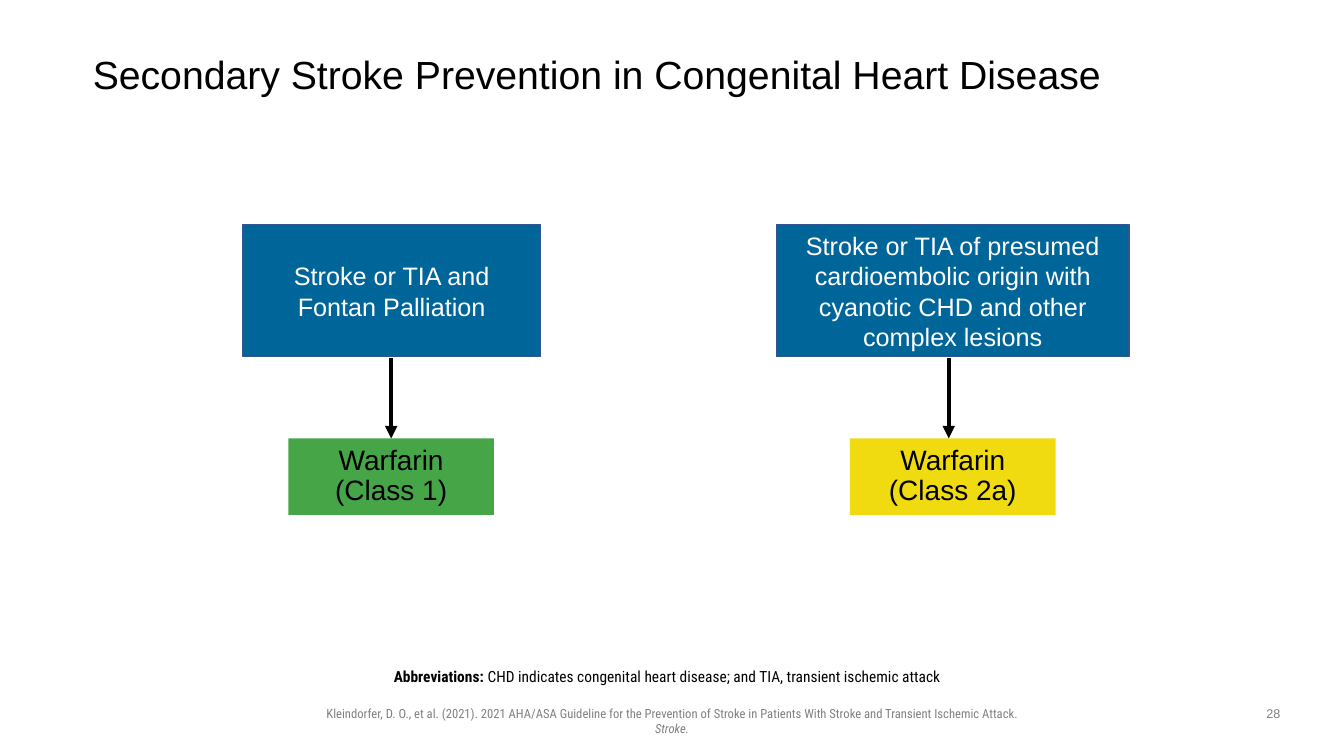
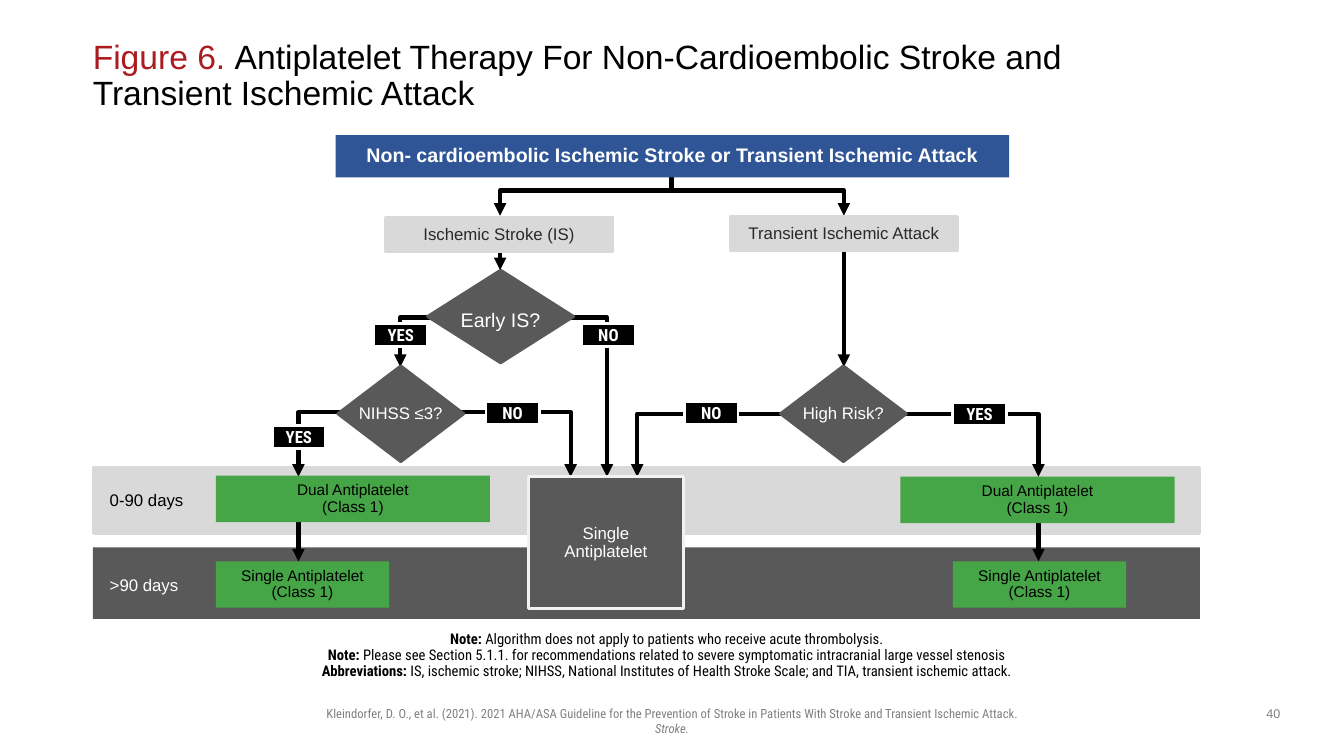
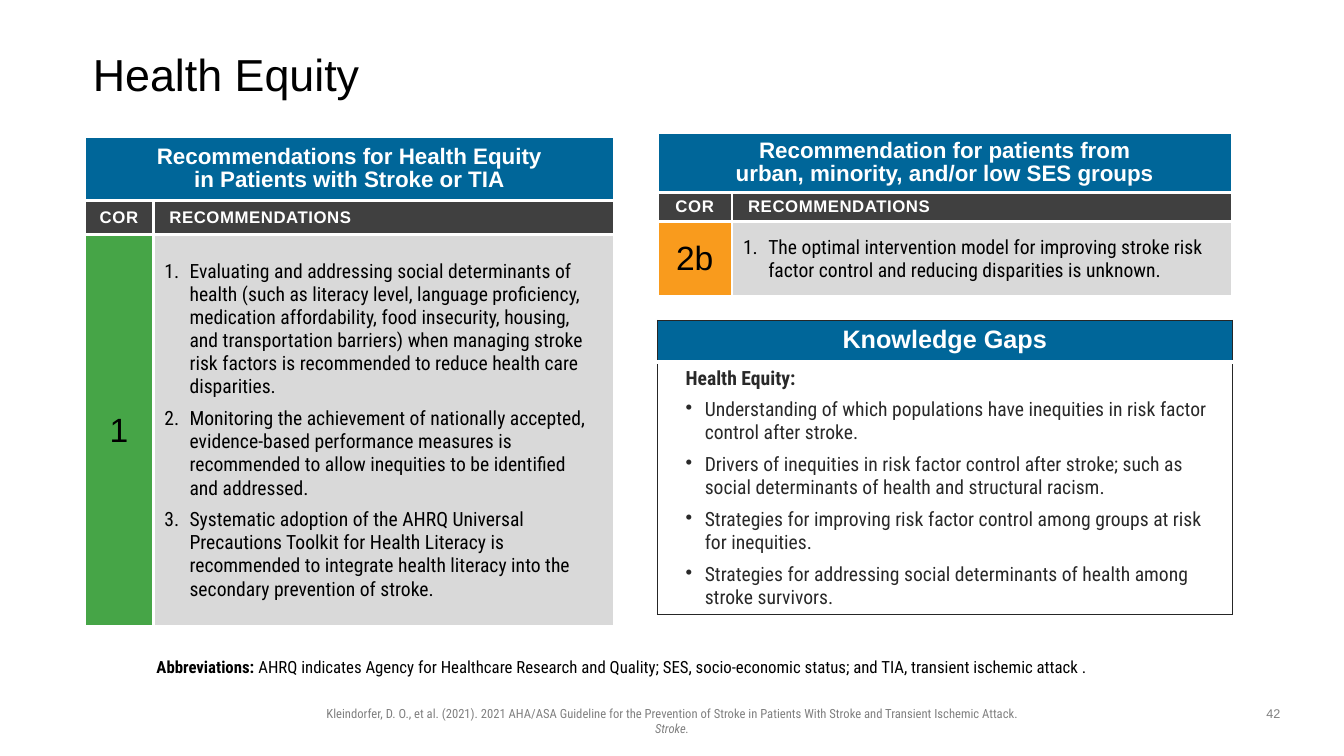
"""Build three slides on secondary stroke prevention: two flowcharts and a table page."""
from dataclasses import dataclass

from lxml import etree
from pptx import Presentation
from pptx.dml.color import RGBColor
from pptx.enum.shapes import MSO_CONNECTOR, MSO_SHAPE
from pptx.enum.text import MSO_ANCHOR, MSO_AUTO_SIZE, PP_ALIGN
from pptx.oxml.ns import qn
from pptx.util import Pt

PX = 9144
STRAIGHT = MSO_CONNECTOR.STRAIGHT
RECTANGLE, DIAMOND = MSO_SHAPE.RECTANGLE, MSO_SHAPE.DIAMOND
TOP, MIDDLE = MSO_ANCHOR.TOP, MSO_ANCHOR.MIDDLE
LEFT, CENTER = PP_ALIGN.LEFT, PP_ALIGN.CENTER
NO_AUTOFIT = MSO_AUTO_SIZE.NONE


@dataclass(frozen=True)
class Theme:
    sans: str = "Arial"
    condensed: str = "Roboto Condensed"
    black: str = "000000"
    white: str = "FFFFFF"
    ink: str = "292929"
    muted: str = "808080"
    red: str = "AC1B1F"
    blue: str = "006699"
    blue_edge: str = "325491"
    navy: str = "2F5597"
    green: str = "46A547"
    yellow: str = "F0DB10"
    orange: str = "F99B1D"
    light: str = "D9D9D9"
    pale: str = "F2F2F2"
    slate: str = "595959"
    charcoal: str = "404040"
    frame: str = "262626"
    footer: int = 9
    small: int = 11
    label: int = 12
    body: int = 14
    heading: int = 16
    box: int = 18
    drug: int = 20
    grade: int = 24


theme = Theme()
PADDING = (10, 5, 10, 5)
BOLD = {"bold": True}


def write(host, paragraphs, size, color, font=theme.sans, bold=False, align=CENTER,
          anchor=MIDDLE, margins=(0, 0, 0, 0), leading=1.0, after=0, left=0, hang=0,
          bullet=("a:buNone", {}), tracking=0, wrap=True):
    frame = host.text_frame
    holder = frame if hasattr(host, "shape_id") else host
    holder.vertical_anchor = anchor
    (holder.margin_left, holder.margin_top,
     holder.margin_right, holder.margin_bottom) = [edge * PX for edge in margins]
    frame.auto_size = NO_AUTOFIT
    frame.word_wrap = wrap
    for content in paragraphs:
        first = frame.paragraphs[0]
        paragraph = frame.add_paragraph() if first.runs else first
        properties = paragraph._p.get_or_add_pPr()
        properties.set("marL", str(left * PX))
        properties.set("indent", str(-hang * PX))
        tag, attributes = bullet
        etree.SubElement(properties, qn(tag), attributes)
        paragraph.alignment = align
        paragraph.line_spacing = leading
        paragraph.space_before = Pt(0)
        paragraph.space_after = Pt(after)
        for text, changes in [(content, {})] if isinstance(content, str) else content:
            run = paragraph.add_run()
            run.text = text
            run.font.name = font
            run.font.size = Pt(size)
            run.font.bold = changes.get("bold", bold)
            run.font.italic = changes.get("italic", False)
            run.font.color.rgb = RGBColor.from_string(changes.get("color", color))
            if tracking:
                run._r.get_or_add_rPr().set("spc", str(tracking))


def box(slide, place, fill, paragraphs=(), line=None, weight=2, geometry=RECTANGLE, **style):
    shape = slide.shapes.add_shape(geometry, *[length * PX for length in place])
    shape.shadow.inherit = False
    shape.fill.solid()
    shape.fill.fore_color.rgb = RGBColor.from_string(fill)
    if line:
        shape.line.color.rgb = RGBColor.from_string(line)
        shape.line.width = Pt(weight)
    else:
        shape.line.fill.background()
    if paragraphs:
        write(shape, paragraphs, **style)


prs = Presentation()
prs.slide_width, prs.slide_height = 1333 * PX, 750 * PX
layout = prs.slide_layouts[1]

pages = [
    ("28", 28, 1150, ["Secondary Stroke Prevention in Congenital Heart Disease"],
     (92, 659, 1150, 30), 11,
     [[("Abbreviations: ", BOLD),
       ("CHD indicates congenital heart disease; and TIA, transient ischemic attack", {})]]),
    ("40", 24, 1006,
     [[("Figure 6. ", {"color": theme.red}),
       ("Antiplatelet Therapy For Non-Cardioembolic Stroke and Transient Ischemic Attack", {})]],
     (270, 622, 793, 30), 10.5,
     [[("Note: ", BOLD),
       ("Algorithm does not apply to patients who receive acute thrombolysis.", {})],
      [("Note: ", BOLD),
       ("Please see Section 5.1.1. for recommendations related to severe symptomatic "
        "intracranial large vessel stenosis", {})],
      [("Abbreviations: ", BOLD),
       ("IS, ischemic stroke; NIHSS, National Institutes of Health Stroke Scale; and TIA, "
        "transient ischemic attack.", {})]]),
    ("42", 32, 1150, ["Health Equity"],
     (112, 649, 1020, 30), 12,
     [[("Abbreviations: ", BOLD),
       ("AHRQ indicates Agency for Healthcare Research and Quality; SES, socio-economic "
        "status; and TIA, transient ischemic attack .", {})]]),
]

slides = []
for number, title_size, title_width, title, note_place, note_size, note in pages:
    slide = prs.slides.add_slide(layout)
    slides.append(slide)
    heading, footnote = slide.placeholders
    for holder, place in ((heading, (92, 40, title_width, 72)), (footnote, note_place)):
        holder.left, holder.top, holder.width, holder.height = [n * PX for n in place]
    write(heading, title, title_size, theme.black, align=LEFT, leading=0.9)
    write(footnote, note, note_size, theme.black, theme.condensed, anchor=TOP,
          margins=(0, 5, 10, 5), leading=0.9)
    page_number = slide.shapes.add_textbox(1242 * PX, 695 * PX, 42 * PX, 26 * PX)
    write(page_number, [number], theme.footer, theme.muted, anchor=TOP, margins=PADDING)

congenital, antiplatelet, equity = slides

citation = congenital.shapes.add_textbox(294 * PX, 695 * PX, 745 * PX, 25 * PX)
write(citation,
      ["Kleindorfer, D. O., et al. (2021). 2021 AHA/ASA Guideline for the Prevention of Stroke "
       "in Patients With Stroke and Transient Ischemic Attack.",
       [("Stroke.", {"italic": True})]],
      theme.footer, theme.muted, theme.condensed, anchor=TOP, margins=PADDING)
layout.shapes.element.append(citation.element)

box(antiplatelet, (92, 543, 1098, 71), theme.slate)
box(antiplatelet, (93, 464, 1097, 65), theme.light, line=theme.light)

routes = [
    (congenital, [(388, 355), (388, 435)]),
    (congenital, [(941, 355), (941, 435)]),
    (antiplatelet, [(666, 164), (666, 189), (496, 189), (496, 214)]),
    (antiplatelet, [(666, 189), (837, 189), (837, 214)]),
    (antiplatelet, [(837, 241), (837, 364)]),
    (antiplatelet, [(496, 249), (496, 268)]),
    (antiplatelet, [(448, 315), (397, 315), (397, 364)]),
    (antiplatelet, [(550, 315), (602, 315), (602, 473)]),
    (antiplatelet, [(348, 409), (296, 409), (296, 473)]),
    (antiplatelet, [(450, 409), (566, 409), (566, 473)]),
    (antiplatelet, [(787, 411), (632, 411), (632, 473)]),
    (antiplatelet, [(890, 411), (1030, 411), (1030, 473)]),
    (antiplatelet, [(296, 513), (296, 557)]),
    (antiplatelet, [(1030, 513), (1030, 557)]),
]
for slide, points in routes:
    if len(points) == 2:
        ends = [length * PX for point in points for length in point]
        arrow = slide.shapes.add_connector(STRAIGHT, *ends)
    else:
        builder = slide.shapes.build_freeform(*points[0], scale=PX)
        builder.add_line_segments(points[1:], close=False)
        arrow = builder.convert_to_shape()
        arrow.fill.background()
    arrow.line.color.rgb = RGBColor.from_string(theme.black)
    arrow.line.width = Pt(3)
    properties = arrow.element.spPr
    etree.SubElement(properties.find(qn("a:ln")), qn("a:tailEnd"), {"type": "triangle"})
    etree.SubElement(properties, qn("a:effectLst"))

for place, condition in [
    ((241, 223, 295, 131), "Stroke or TIA and Fontan Palliation"),
    ((770, 223, 350, 131), "Stroke or TIA of presumed cardioembolic origin with cyanotic CHD "
                           "and other complex lesions"),
]:
    box(congenital, place, theme.blue, [condition], theme.blue_edge, 1,
        size=theme.box, color=theme.white, margins=PADDING)
for left, fill, strength in [(286, theme.green, "(Class 1)"), (843, theme.yellow, "(Class 2a)")]:
    box(congenital, (left, 435, 204, 76), fill, ["Warfarin", strength],
        size=theme.drug, color=theme.black, leading=0.9)

box(antiplatelet, (333, 134, 668, 42), theme.navy,
    ["Non- cardioembolic Ischemic Stroke or Transient Ischemic Attack"],
    size=theme.body, color=theme.white, bold=True, leading=0.9)
for left, top, event in [(382, 216, "Ischemic Stroke (IS)"),
                         (724, 215, "Transient Ischemic Attack")]:
    box(antiplatelet, (left, top, 226, 34), theme.light, [event], theme.light,
        size=theme.label, color=theme.ink, leading=0.9)
for place, question, size, inset in [
    ((424, 268, 145, 92), "Early IS?", theme.body, 10),
    ((335, 363, 125, 95), "NIHSS ≤3?", theme.label, 0),
    ((774, 363, 125, 95), "High Risk?", theme.label, 0),
]:
    box(antiplatelet, place, theme.slate, [question], theme.slate, geometry=DIAMOND,
        size=size, color=theme.white, margins=(0, inset, 0, 0), leading=0.9, wrap=False)
for left, top, width, therapy in [
    (214, 472, 272, "Dual Antiplatelet"), (893, 473, 272, "Dual Antiplatelet"),
    (214, 557, 172, "Single Antiplatelet"), (945, 557, 172, "Single Antiplatelet"),
]:
    box(antiplatelet, (left, top, width, 46), theme.green, [therapy, "(Class 1)"],
        size=theme.small, color=theme.black, leading=0.9)
box(antiplatelet, (524, 473, 154, 131), theme.slate, ["Single", "Antiplatelet"], theme.pale,
    size=theme.label, color=theme.white, leading=0.9, wrap=False)
for left, top, answer in [(371, 321, "YES"), (577, 321, "NO"), (270, 422, "YES"),
                          (482, 398, "NO"), (679, 398, "NO"), (945, 399, "YES")]:
    box(antiplatelet, (left, top, 53, 23), theme.black, [answer], theme.white,
        size=theme.label, color=theme.white, font=theme.condensed, bold=True)
for top, period, color in [(481, "0-90 days", theme.black), (565, ">90 days", theme.white)]:
    period_label = antiplatelet.shapes.add_textbox(99 * PX, top * PX, 113 * PX, 30 * PX)
    write(period_label, [period], theme.label, color, align=LEFT, anchor=TOP, margins=PADDING)

white_grid = {side: (theme.white, 2.25) for side in "LRTB"}
header_style = dict(color=theme.white, bold=True, margins=PADDING)
tables = []
for corner, columns, rows, topic, leading, grade, grade_fill, advice in [
    ((84, 136), (68, 457), (63, 34, 388),
     ["Recommendations for Health Equity", "in Patients with Stroke or TIA"], 0.95,
     "1", theme.green,
     ["Evaluating and addressing social determinants of health (such as literacy level, "
      "language proficiency, medication affordability, food insecurity, housing, and "
      "transportation barriers) when managing stroke risk factors is recommended to reduce "
      "health care disparities.",
      "Monitoring the achievement of nationally accepted, evidence-based performance measures "
      "is recommended to allow inequities to be identified and addressed.",
      "Systematic adoption of the AHRQ Universal Precautions Toolkit for Health Literacy is "
      "recommended to integrate health literacy into the secondary prevention of stroke."]),
    ((652, 132), (74, 496), (59, 29, 74),
     ["Recommendation for patients from", "urban, minority, and/or low SES groups"], 0.95,
     "2b", theme.orange,
     ["The optimal intervention model for improving stroke risk factor control and reducing "
      "disparities is unknown."]),
]:
    tables.append((corner, columns, rows, [
        (0, 0, theme.blue, white_grid,
         [(topic, dict(header_style, size=theme.heading, leading=leading))]),
        (1, 0, theme.charcoal, white_grid,
         [(["COR"], dict(header_style, size=theme.label, tracking=50))]),
        (1, 1, theme.charcoal, white_grid,
         [(["RECOMMENDATIONS"],
           dict(header_style, size=theme.label, tracking=40, align=LEFT, left=6))]),
        (2, 0, grade_fill, white_grid,
         [([grade], dict(size=theme.grade, color=theme.black, margins=(5, 5, 5, 5)))]),
        (2, 1, theme.light, white_grid,
         [(advice, dict(size=theme.body, color=theme.black, font=theme.condensed, align=LEFT,
                        margins=(5, 5, 20, 5), after=6, left=31, hang=25,
                        bullet=("a:buAutoNum", {"type": "arabicPeriod"})))]),
    ]))

outline, divider = (theme.frame, 1), (theme.white, 3)
gap_style = dict(size=theme.body, color=theme.ink, font=theme.condensed, align=LEFT,
                 anchor=TOP, margins=PADDING, after=6)
tables.append(((652, 318), (570,), (41, 251), [
    (0, 0, theme.blue, {"L": outline, "R": outline, "T": outline, "B": divider},
     [(["Knowledge Gaps"], dict(header_style, size=theme.box, anchor=TOP))]),
    (1, 0, theme.white, {"L": outline, "R": outline, "T": divider, "B": outline},
     [(["Health Equity:"], dict(gap_style, bold=True, left=18)),
      (["Understanding of which populations have inequities in risk factor control after stroke.",
        "Drivers of inequities in risk factor control after stroke; such as social determinants "
        "of health and structural racism.",
        "Strategies for improving risk factor control among groups at risk for inequities.",
        "Strategies for addressing social determinants of health among stroke survivors."],
       dict(gap_style, left=37, hang=19, bullet=("a:buChar", {"char": "•"})))]),
]))

for (left, top), columns, rows, cells in tables:
    table = equity.shapes.add_table(len(rows), len(columns), left * PX, top * PX,
                                    sum(columns) * PX, sum(rows) * PX).table
    table.first_row = table.horz_banding = False
    for column, width in zip(table.columns, columns):
        column.width = width * PX
    for row, height in zip(table.rows, rows):
        row.height = height * PX
    if len(columns) > 1:
        table.cell(0, 0).merge(table.cell(0, len(columns) - 1))
    for row_index, column_index, fill, borders, texts in cells:
        cell = table.cell(row_index, column_index)
        properties = cell._tc.get_or_add_tcPr()
        for side, (color, weight) in borders.items():
            border = etree.SubElement(properties, qn(f"a:ln{side}"), {"w": str(Pt(weight))})
            solid = etree.SubElement(border, qn("a:solidFill"))
            etree.SubElement(solid, qn("a:srgbClr"), {"val": color})
        cell.fill.solid()
        cell.fill.fore_color.rgb = RGBColor.from_string(fill)
        for paragraphs, style in texts:
            write(cell, paragraphs, **style)

prs.save("out.pptx")
